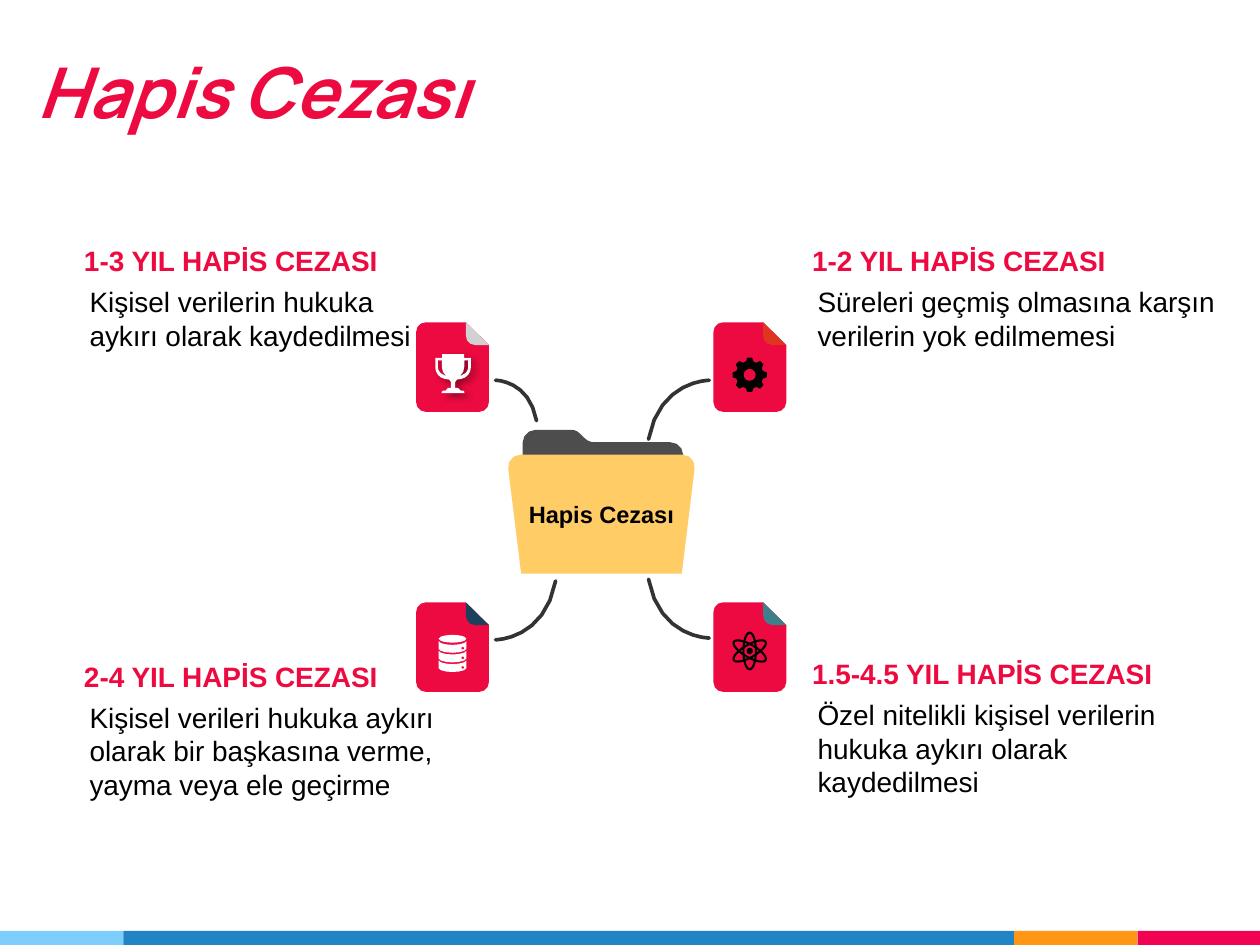
from math import cos, sin, radians
from lxml.etree import SubElement
from pptx import Presentation
from pptx.dml.color import RGBColor
from pptx.enum.shapes import MSO_SHAPE
from pptx.enum.text import MSO_ANCHOR, PP_ALIGN
from pptx.oxml.ns import qn
from pptx.util import Pt

# Content
RED, BLACK, WHITE, DARK = "EC0A40", "000000", "FFFFFF", "333333"
TITLE = "Hapis Cezası"
BARS = [(70.5, "7ECEFD"), (509, "2185C5"), (70.5, "FF9715"), (70, "F20253")]
NOTES = [  # left, top, head, body, body width
    (48, 135.5, "1-3 YIL HAPİS CEZASI",
     "Kişisel verilerin hukuka aykırı olarak kaydedilmesi", 202),
    (464, 135.5, "1-2 YIL HAPİS CEZASI",
     "Süreleri geçmiş olmasına karşın verilerin yok edilmemesi", 233),
    (48, 373, "2-4 YIL HAPİS CEZASI",
     "Kişisel verileri hukuka aykırı olarak bir başkasına verme, "
     "yayma veya ele geçirme", 233),
    (464, 371.5, "1.5-4.5 YIL HAPİS CEZASI",
     "Özel nitelikli kişisel verilerin hukuka aykırı olarak kaydedilmesi", 233),
]
PAGES = [(237.8, 184.2, "D1D1D1"), (407.7, 184.2, "DF361F"),
         (237.8, 344.2, "1D405D"), (407.7, 344.2, "3D808C")]
ARCS = [(283.2, 217.3, 306.6, 240.4), (405.3, 217.3, 370.6, 251),
        (283.2, 365.6, 317.5, 332), (405.3, 364.6, 370.6, 331)]

# Outlines: a pair is a line to a point, six numbers are a cubic curve
SHEET = [(28.4, 0), (5.6, 0), (2.5, 0, 0, 2.5, 0, 5.6), (0, 45.6),
         (0, 48.7, 2.5, 51.2, 5.6, 51.2), (36, 51.2),
         (39.1, 51.2, 41.6, 48.7, 41.6, 45.6), (41.6, 13)]
FOLD = [(28.4, 7.5), (28.4, 0), (41.6, 13), (33.8, 13),
        (30.8, 13, 28.4, 10.6, 28.4, 7.5)]
BACK = [(298.6, 272), (298.6, 253), (298.6, 249, 302, 245.6, 306, 245.6),
        (326.5, 245.6), (328.4, 245.6, 330, 246.4, 331.3, 247.7),
        (334.6, 250.9), (335.8, 252, 337.7, 252.7, 339.6, 252.7), (383, 252.7),
        (387, 252.7, 390.4, 255.9, 390.4, 260), (390.4, 272)]
FRONT = [(389.6, 327.9), (297.8, 327.9), (290.4, 267.8),
         (290, 263.4, 293.2, 259.8, 297.6, 259.8), (389.8, 259.8),
         (394.2, 259.8, 397.4, 263.4, 396.9, 267.8)]
CUP = [(0, 0), (-6.3, 0), (-6.3, 2.2), (-10.1, 2.2), (-10.1, 7.9),
       (-10.1, 7.9, -10.1, 10.1, -8.6, 11.9), (-7.2, 13.7, -5, 14.4, -2.2, 14.6),
       (-1.2, 16), (-1.2, 19.4), (-2.9, 19.4), (-4.3, 20.9), (-5.8, 20.9),
       (-6.5, 21.6), (-6.5, 22.3), (0, 22.3)]
GRIP = [(-7.2, 10.8), (-8.6, 9.4, -8.6, 7.9, -8.6, 7.9), (-8.6, 3.6), (-6.4, 3.6),
        (-6.4, 7.2), (-5.8, 10.1), (-3.8, 12.8)]
BAND = [(-7.9, 0), (-7.9, 1.2, -3.5, 2.1, 0, 2.1), (3.5, 2.1, 7.9, 1.2, 7.9, 0),
        (7.9, 4.5), (7.9, 5.7, 3.5, 6.6, 0, 6.6),
        (-3.5, 6.6, -7.9, 5.7, -7.9, 4.5)]

deck = Presentation()
deck.slide_width, deck.slide_height = Pt(720), Pt(540)
slide = deck.slides.add_slide(deck.slide_layouts[6])
shapes = slide.shapes


def color(code):
    return RGBColor.from_string(code)


def paint(shape, fill=None, line=None, width=0):
    shape.shadow.inherit = False
    for part, code in ((shape.fill, fill), (shape.line.fill, line)):
        if code:
            part.solid()
            part.fore_color.rgb = color(code)
        else:
            part.background()
    if line:
        shape.line.width = Pt(width)
        shape.element.spPr.find(qn("a:ln")).set("cap", "rnd")
    return shape


def curve(path, steps=3):
    """Turn an outline into plain points."""
    out = []
    for seg in path:
        if len(seg) == 2:
            out.append(seg)
            continue
        nodes = [out[-1], seg[:2], seg[2:4], seg[4:]]
        for i in range(1, steps + 1):
            t = i / steps
            mix = ((1 - t) ** 3, 3 * t * (1 - t) ** 2, 3 * t * t * (1 - t), t ** 3)
            out.append(tuple(sum(m * n[k] for m, n in zip(mix, nodes))
                             for k in (0, 1)))
    return out


def draw(x, y, rings, fill=None, line=None, width=0, close=True):
    rings = [[(round((x + u) * 100), round((y + v) * 100)) for u, v in ring]
             for ring in rings]
    pen = shapes.build_freeform(*rings[0][0], scale=127)
    for i, ring in enumerate(rings):
        if i:
            pen.move_to(*ring[0])
        pen.add_line_segments(ring[1:], close=close)
    return paint(pen.convert_to_shape(), fill, line, width)


def disc(x, y, rx, ry, tilt=0, **look):
    shape = shapes.add_shape(MSO_SHAPE.OVAL, Pt(x - rx), Pt(y - ry),
                             Pt(2 * rx), Pt(2 * ry))
    shape.rotation = tilt
    paint(shape, **look)


def write(shape, text, font, inset=(0, 3.6), anchor=MSO_ANCHOR.TOP, align=PP_ALIGN.LEFT):
    frame = shape.text_frame
    side, edge = map(Pt, inset)
    form = dict(word_wrap=True, vertical_anchor=anchor, margin_left=side,
                margin_right=side, margin_top=edge, margin_bottom=edge)
    for key, val in form.items():
        setattr(frame, key, val)
    para = frame.paragraphs[0]
    para.alignment = align
    run = para.add_run()
    run.text = text
    for key, val in font.items():
        if key == "color":
            run.font.color.rgb = color(val)
        else:
            setattr(run.font, key, val)


def label(x, y, w, h, *args, **more):
    write(shapes.add_textbox(Pt(x), Pt(y), Pt(w), Pt(h)), *args, **more)


# Footer bars
left = 0
for wide, tone in BARS:
    paint(shapes.add_shape(MSO_SHAPE.RECTANGLE, Pt(left), Pt(532), Pt(wide), Pt(8)), tone)
    left += wide

# Title and notes
label(14.4, 19.4, 692, 63.4, TITLE,
      dict(name="Manrope", size=Pt(40), bold=True, italic=True, color=RED),
      inset=(7.2, 7.2), anchor=MSO_ANCHOR.BOTTOM)
body = dict(name="Arial", size=Pt(16), color=BLACK)
head = {**body, "bold": True, "color": RED}
for x, y, top, text, wide in NOTES:
    label(x, y, 240, 26.6, top, head, anchor=MSO_ANCHOR.BOTTOM)
    label(x + 3.2, y + 23.6, wide, 65, text, body)

# Folder, pages and arcs
draw(0, 0, [curve(BACK)], "4D4D4D")
for x, y, tone in PAGES:
    draw(x, y, [curve(SHEET)], RED)
    draw(x, y, [curve(FOLD)], tone)
write(draw(0, 0, [curve(FRONT)], "FFCC66"), TITLE,
      {**head, "size": Pt(13.5), "color": BLACK},
      inset=(2, 2), anchor=MSO_ANCHOR.MIDDLE, align=PP_ALIGN.CENTER)
for x, y, ex, ey in ARCS:
    bend = [(x, y), (x, y, x + 0.82 * (ex - x), y, ex, ey)]
    draw(0, 0, [curve(bend, 8)], line=DARK, width=2.1, close=False)


# Trophy with its shadow
def flip(points):
    return [(-u, v) for u, v in reversed(points)]


half, grip = curve(CUP), curve(GRIP)
cup = draw(258.9, 202.3, [half + flip(half), grip, flip(grip)], WHITE)
glow = SubElement(cup.element.spPr.find(qn("a:effectLst")), qn("a:outerShdw"),
                  blurRad=str(Pt(4)), dist=str(Pt(3)), dir="2700000")
tint = SubElement(glow, qn("a:srgbClr"), val=BLACK)
SubElement(tint, qn("a:alpha"), val="40000")

# Gear
teeth = [(r * cos(radians(a + d)), r * sin(radians(a + d)))
         for a in range(0, 360, 45)
         for d, r in ((-16, 7.9), (-8, 9.9), (8, 9.9), (16, 7.9))]
draw(428.4, 214.2, [teeth], BLACK)
disc(428.4, 214.2, 3.4, 3.4, fill=RED)

# Atom
disc(428.4, 372, 1.8, 1.8, fill=BLACK)
for tilt in (0, 60, 120):
    disc(428.4, 372, 3.6, 10.5, tilt, line=BLACK, width=1.2)

# Data store
disc(258.6, 365, 7.9, 2.2, fill=WHITE)
for i in range(3):
    y = 366.4 + 5.5 * i
    draw(258.6, y, [curve(BAND)], WHITE)
    disc(264.4, y + 4, 0.7, 0.7, fill=RED)

deck.save("out.pptx")
